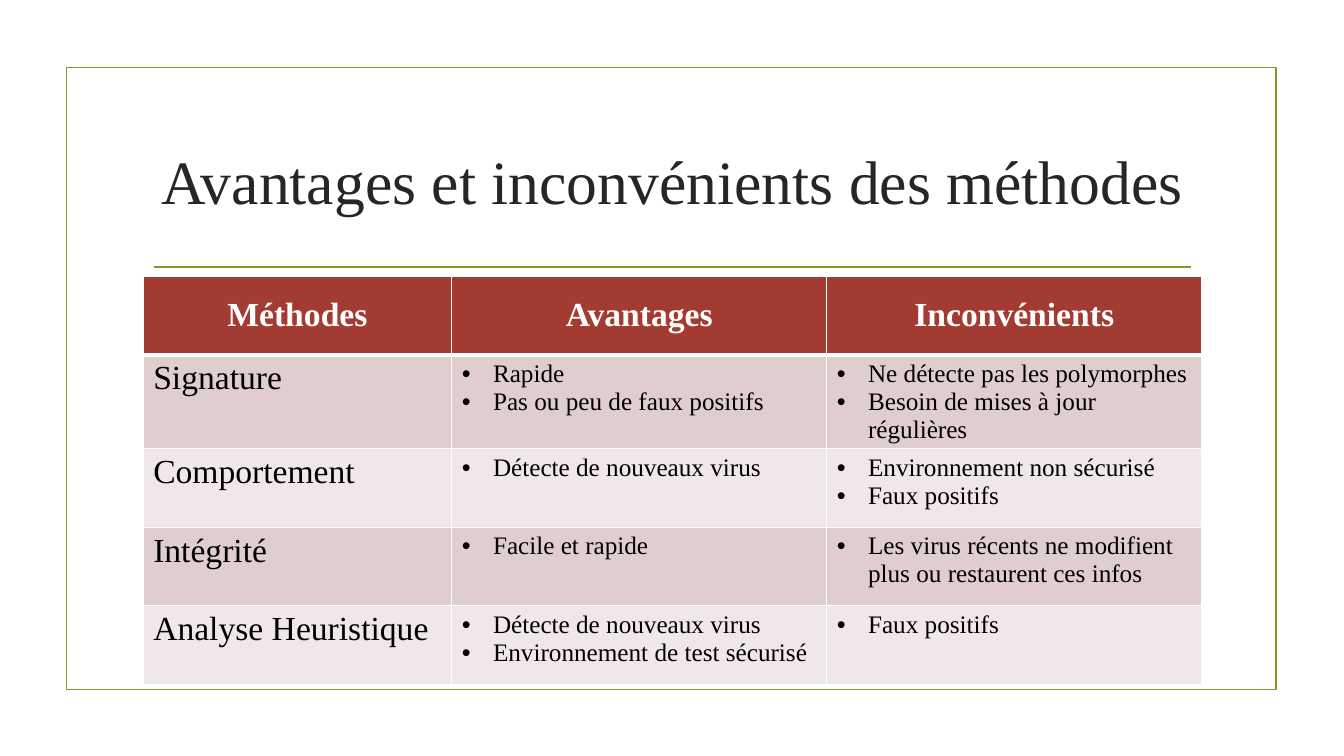
from lxml import etree
from pptx import Presentation
from pptx.dml.color import RGBColor
from pptx.enum import shapes, text
from pptx.oxml import ns
from pptx.util import Inches, Pt

TITLE = "Avantages et inconvénients des méthodes"
HEADERS = ["Méthodes", "Avantages", "Inconvénients"]
METHODS = [
    ("Signature",
     ["Rapide", "Pas ou peu de faux positifs"],
     ["Ne détecte pas les polymorphes", "Besoin de mises à jour régulières"]),
    ("Comportement",
     ["Détecte de nouveaux virus"],
     ["Environnement non sécurisé", "Faux positifs"]),
    ("Intégrité",
     ["Facile et rapide"],
     ["Les virus récents ne modifient plus ou restaurent ces infos"]),
    ("Analyse Heuristique",
     ["Détecte de nouveaux virus", "Environnement de test sécurisé"],
     ["Faux positifs"]),
]
COLORS = {
    "frame": "83992A", "title": "262626", "header": "A23C33", "dark_band": "E0CECE",
    "light_band": "F0E8E8", "white": "FFFFFF", "black": "000000",
}
FONT = "Times New Roman"
LEFT, WIDTH = 1.42, 10.5
COLUMN_WIDTHS = [3.06, 3.72, 3.72]
ROW_HEIGHT = 0.78
BULLET_INDENT = 0.31


def color(name):
    return RGBColor.from_string(COLORS[name])


def add_run(paragraph, content, size, color_name, bold=False):
    run = paragraph.add_run()
    run.text = content
    run.font.name = FONT
    run.font.size = Pt(size)
    run.font.bold = bold
    run.font.color.rgb = color(color_name)


def style_line(line):
    line.color.rgb = color("frame")
    line.width = Pt(1.25)


def add_bullet(paragraph):
    properties = paragraph._p.get_or_add_pPr()
    properties.set("marL", str(Inches(BULLET_INDENT)))
    properties.set("indent", str(-Inches(BULLET_INDENT)))
    etree.SubElement(properties, ns.qn("a:buFont"), typeface="Arial")
    etree.SubElement(properties, ns.qn("a:buChar"), char="•")


def style_cell(cell, fill_name, top=1, bottom=1):
    """Give the cell white borders (widths in points) and a solid fill."""
    properties = cell._tc.get_or_add_tcPr()
    for side, width in (("L", 1), ("R", 1), ("T", top), ("B", bottom)):
        border = etree.SubElement(properties, ns.qn(f"a:ln{side}"), w=str(Pt(width)))
        fill = etree.SubElement(border, ns.qn("a:solidFill"))
        etree.SubElement(fill, ns.qn("a:srgbClr"), val=COLORS["white"])
    cell.fill.solid()
    cell.fill.fore_color.rgb = color(fill_name)


def add_frame(slide):
    frame = slide.shapes.add_shape(shapes.MSO_SHAPE.RECTANGLE, Inches(0.66), Inches(0.67),
                                   Inches(12), Inches(6.17))
    frame.shadow.inherit = False
    frame.fill.background()
    style_line(frame.line)
    rule = slide.shapes.add_connector(shapes.MSO_CONNECTOR.STRAIGHT, Inches(1.53), Inches(2.65),
                                      Inches(11.81), Inches(2.65))
    style_line(rule.line)
    etree.SubElement(rule._element.spPr, ns.qn("a:effectLst"))


def fill_title(title):
    title.left, title.top = Inches(LEFT), Inches(1.07)
    title.width, title.height = Inches(WIDTH), Inches(1.43)
    frame = title.text_frame
    frame.word_wrap = True
    frame.auto_size = text.MSO_AUTO_SIZE.NONE
    frame.vertical_anchor = text.MSO_ANCHOR.MIDDLE
    frame.paragraphs[0].alignment = text.PP_ALIGN.CENTER
    add_run(frame.paragraphs[0], TITLE, 44, "title")


def add_methods_table(slide):
    row_count = len(METHODS) + 1
    table = slide.shapes.add_table(row_count, len(HEADERS), Inches(LEFT), Inches(2.74),
                                   Inches(WIDTH), Inches(ROW_HEIGHT * row_count)).table
    for column, width in zip(table.columns, COLUMN_WIDTHS):
        column.width = Inches(width)
    for row in table.rows:
        row.height = Inches(ROW_HEIGHT)

    for column_index, header in enumerate(HEADERS):
        cell = table.cell(0, column_index)
        style_cell(cell, "header", bottom=3)
        cell.vertical_anchor = text.MSO_ANCHOR.MIDDLE
        paragraph = cell.text_frame.paragraphs[0]
        paragraph.alignment = text.PP_ALIGN.CENTER
        add_run(paragraph, header, 24, "white", bold=True)

    for row_index, (method, *point_lists) in enumerate(METHODS, start=1):
        band = "dark_band" if row_index % 2 else "light_band"
        top = 3 if row_index == 1 else 1
        name_cell = table.cell(row_index, 0)
        style_cell(name_cell, band, top)
        add_run(name_cell.text_frame.paragraphs[0], method, 24, "black")
        for column_index, points in enumerate(point_lists, start=1):
            cell = table.cell(row_index, column_index)
            style_cell(cell, band, top)
            frame = cell.text_frame
            for point_index, point in enumerate(points):
                paragraph = frame.add_paragraph() if point_index else frame.paragraphs[0]
                add_bullet(paragraph)
                add_run(paragraph, point, 18, "black")


def main():
    presentation = Presentation()
    presentation.slide_width, presentation.slide_height = Inches(13.33), Inches(7.5)
    slide = presentation.slides.add_slide(presentation.slide_layouts[5])
    add_frame(slide)
    fill_title(slide.shapes.title)
    add_methods_table(slide)
    presentation.save("out.pptx")


if __name__ == "__main__":
    main()
